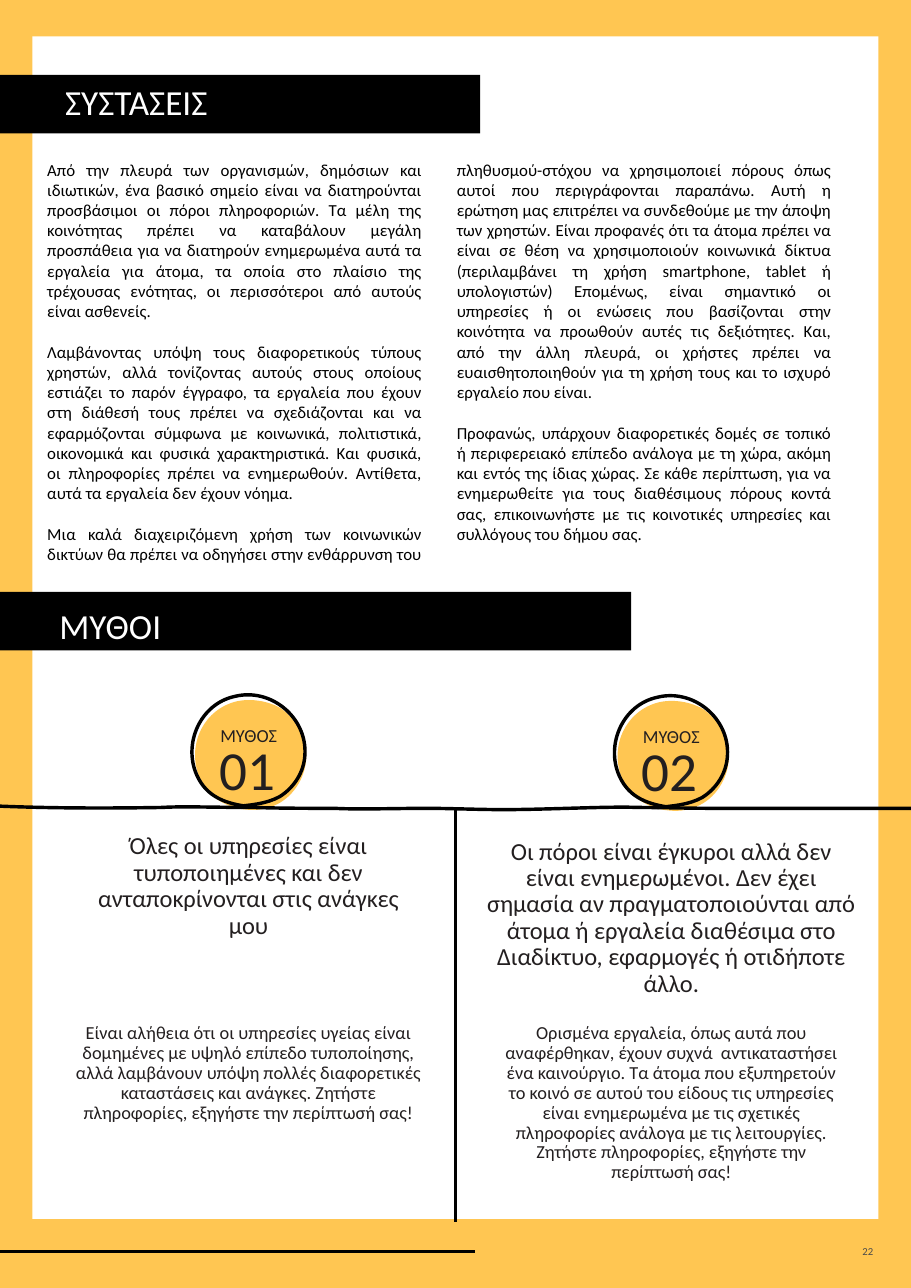
from dataclasses import dataclass

from lxml import etree
from pptx import Presentation
from pptx import util as u
from pptx.dml.color import RGBColor
from pptx.enum import shapes, text
from pptx.oxml.ns import qn


@dataclass
class Theme:
    font: str = "Calibri"
    yellow: RGBColor = RGBColor(0xFF, 0xC6, 0x52)
    white: RGBColor = RGBColor(0xFF, 0xFF, 0xFF)
    black: RGBColor = RGBColor(0, 0, 0)
    ink: RGBColor = RGBColor(0x23, 0x1F, 0x20)
    grey: RGBColor = RGBColor(0x4B, 0x4B, 0x4B)
    banner: int = 23
    body: int = 11
    claim: int = 16
    answer: int = 12
    label: int = 12
    number: int = 36
    page: int = 7
    rule: float = 1.5
    stroke: float = 2.25


theme = Theme()
ALIGN = text.PP_ALIGN
ANCHOR = text.MSO_ANCHOR


def write(box, paragraphs, size, color, align, anchor=ANCHOR.TOP, spacing=0.9, gap=0):
    frame = box.text_frame
    frame.word_wrap = True
    frame.vertical_anchor = anchor
    frame.text = "\n".join(paragraphs)
    for index, paragraph in enumerate(frame.paragraphs):
        paragraph.alignment = align
        if spacing != 1:
            paragraph.line_spacing = spacing
        if index and gap:
            paragraph.space_before = u.Pt(gap)
        for run in paragraph.runs:
            run.font.name = theme.font
            run.font.size = u.Pt(size)
            run.font.color.rgb = color


def draw_curve(parent, box, start, curves, closed=False):
    """Draw cubic curves inside a box; points are centimetres from its corner."""
    left, top, width, height = map(u.Cm, box)
    builder = parent.build_freeform(left, top)
    builder.add_line_segments([(left + width, top + height)], close=False)
    outline = builder.convert_to_shape()
    path = outline._element.spPr.find(".//" + qn("a:path"))
    for segment in list(path):
        path.remove(segment)
    for tag, points in [("a:moveTo", [start])] + [("a:cubicBezTo", curve) for curve in curves]:
        segment = etree.SubElement(path, qn(tag))
        for x, y in points:
            etree.SubElement(segment, qn("a:pt"), x=str(u.Cm(x)), y=str(u.Cm(y)))
    outline.shadow.inherit = False
    if closed:
        etree.SubElement(path, qn("a:close"))
        outline.fill.solid()
        outline.fill.fore_color.rgb = theme.yellow
        outline.line.fill.background()
    else:
        outline.fill.background()
        outline.line.color.rgb = theme.black
        outline.line.width = u.Pt(theme.stroke)


prs = Presentation()
prs.slide_width, prs.slide_height = u.Cm(21), u.Cm(29.7)
slide = prs.slides.add_slide(prs.slide_layouts[6])

# Page frame and section banners: box, colour, title, left and top margins
for box, color, title, left, top in [
    ((0, 0, 21, 29.7), theme.yellow, "", 0, 0),
    ((0.75, 0.84, 19.5, 27.27), theme.white, "", 0, 0),
    ((0, 1.73, 11.07, 1.35), theme.black, "ΣΥΣΤΑΣΕΙΣ", 1.5, 0.13),
    ((0, 13.65, 14.55, 1.35), theme.black, "ΜΥΘΟΙ", 1.37, 0.46),
]:
    panel = slide.shapes.add_shape(shapes.MSO_SHAPE.RECTANGLE, *map(u.Cm, box))
    panel.shadow.inherit = False
    panel.fill.solid()
    panel.fill.fore_color.rgb = color
    panel.line.fill.background()
    if title:
        panel.text_frame.margin_left = u.Cm(left)
        panel.text_frame.margin_top = u.Cm(top)
        write(panel, [title], theme.banner, theme.white, ALIGN.LEFT, ANCHOR.MIDDLE)

# Footer rule and divider between the two myths
for ends, width in [((0, 28.86, 10.95, 28.86), theme.rule),
                    ((10.5, 18.67, 10.5, 28.17), theme.stroke)]:
    rule = slide.shapes.add_connector(shapes.MSO_CONNECTOR.STRAIGHT, *map(u.Cm, ends))
    rule.line.color.rgb = theme.black
    rule.line.width = u.Pt(width)
    etree.SubElement(rule._element.spPr, qn("a:effectLst"))

# Recommendations in two columns
recommendations = [
    "Από την πλευρά των οργανισμών, δημόσιων και ιδιωτικών, ένα βασικό σημείο είναι να "
    "διατηρούνται προσβάσιμοι οι πόροι πληροφοριών. Τα μέλη της κοινότητας πρέπει να "
    "καταβάλουν μεγάλη προσπάθεια για να διατηρούν ενημερωμένα αυτά τα εργαλεία για άτομα, "
    "τα οποία στο πλαίσιο της τρέχουσας ενότητας, οι περισσότεροι από αυτούς είναι ασθενείς.",
    "Λαμβάνοντας υπόψη τους διαφορετικούς τύπους χρηστών, αλλά τονίζοντας αυτούς στους "
    "οποίους εστιάζει το παρόν έγγραφο, τα εργαλεία που έχουν στη διάθεσή τους πρέπει να "
    "σχεδιάζονται και να εφαρμόζονται σύμφωνα με κοινωνικά, πολιτιστικά, οικονομικά και "
    "φυσικά χαρακτηριστικά. Και φυσικά, οι πληροφορίες πρέπει να ενημερωθούν. Αντίθετα, "
    "αυτά τα εργαλεία δεν έχουν νόημα.",
    "Μια καλά διαχειριζόμενη χρήση των κοινωνικών δικτύων θα πρέπει να οδηγήσει στην "
    "ενθάρρυνση του πληθυσμού-στόχου να χρησιμοποιεί πόρους όπως αυτοί που περιγράφονται "
    "παραπάνω. Αυτή η ερώτηση μας επιτρέπει να συνδεθούμε με την άποψη των χρηστών. Είναι "
    "προφανές ότι τα άτομα πρέπει να είναι σε θέση να χρησιμοποιούν κοινωνικά δίκτυα "
    "(περιλαμβάνει τη χρήση smartphone, tablet ή υπολογιστών) Επομένως, είναι σημαντικό οι "
    "υπηρεσίες ή οι ενώσεις που βασίζονται στην κοινότητα να προωθούν αυτές τις δεξιότητες. "
    "Και, από την άλλη πλευρά, οι χρήστες πρέπει να ευαισθητοποιηθούν για τη χρήση τους και "
    "το ισχυρό εργαλείο που είναι.",
    "Προφανώς, υπάρχουν διαφορετικές δομές σε τοπικό ή περιφερειακό επίπεδο ανάλογα με τη "
    "χώρα, ακόμη και εντός της ίδιας χώρας. Σε κάθε περίπτωση, για να ενημερωθείτε για τους "
    "διαθέσιμους πόρους κοντά σας, επικοινωνήστε με τις κοινοτικές υπηρεσίες και συλλόγους "
    "του δήμου σας.",
]
advice = slide.shapes.add_textbox(u.Cm(0.84), u.Cm(3.55), u.Cm(18.58), u.Cm(9.65))
write(advice, recommendations, theme.body, theme.black, ALIGN.JUSTIFY, spacing=1, gap=13.4)
columns = advice.text_frame._txBody.bodyPr
columns.set("numCol", "2")
columns.set("spcCol", str(u.Cm(0.8)))

# Myths: number, badge corner, claim box and text, answer box and text
myths = [
    ("01", (4.44, 16.03), (1.59, 19.1, 8.28, 1.17),
     "Όλες οι υπηρεσίες είναι τυποποιημένες και δεν ανταποκρίνονται στις ανάγκες μου",
     (1.48, 23.49, 8.5, 5.03),
     "Είναι αλήθεια ότι οι υπηρεσίες υγείας είναι δομημένες με υψηλό επίπεδο τυποποίησης, "
     "αλλά λαμβάνουν υπόψη πολλές διαφορετικές καταστάσεις και ανάγκες. Ζητήστε "
     "πληροφορίες, εξηγήστε την περίπτωσή σας!"),
    ("02", (14.18, 16.05), (10.93, 19.22, 9.09, 1.17),
     "Οι πόροι είναι έγκυροι αλλά δεν είναι ενημερωμένοι. Δεν έχει σημασία αν "
     "πραγματοποιούνται από άτομα ή εργαλεία διαθέσιμα στο Διαδίκτυο, εφαρμογές ή "
     "οτιδήποτε άλλο.",
     (11.25, 23.49, 8.46, 4.19),
     "Ορισμένα εργαλεία, όπως αυτά που αναφέρθηκαν, έχουν συχνά  αντικαταστήσει ένα "
     "καινούργιο. Τα άτομα που εξυπηρετούν το κοινό σε αυτού του είδους τις υπηρεσίες "
     "είναι ενημερωμένα με τις σχετικές πληροφορίες ανάλογα με τις λειτουργίες. Ζητήστε "
     "πληροφορίες, εξηγήστε την περίπτωσή σας!"),
]
disc = [
    ((0.64, 2.44), (0.94, 2.57), (1.24, 2.59)), ((1.5, 2.62), (1.75, 2.57), (1.96, 2.46)),
    ((2.36, 2.26), (2.64, 1.78), (2.62, 1.3)), ((2.59, 0.89), (2.36, 0.48), (2.03, 0.25)),
    ((1.68, 0.05), (1.19, 0), (0.84, 0.15)), ((0.43, 0.31), (0.15, 0.69), (0.08, 1.09)),
    ((0, 1.5), (0.13, 1.96), (0.43, 2.24)),
]
ring = [
    ((1.32, 2.54), (1.7, 2.51), (2.01, 2.34)), ((2.34, 2.13), (2.57, 1.78), (2.59, 1.37)),
    ((2.64, 0.51), (1.8, -0.18), (0.97, 0.03)), ((0.18, 0.2), (-0.23, 1.12), (0.1, 1.85)),
    ((0.33, 2.36), (0.79, 2.51), (1.3, 2.57)),
]
for number, (x, y), claim_box, claim, answer_box, answer in myths:
    for box, words, size in [(answer_box, answer, theme.answer), (claim_box, claim, theme.claim)]:
        statement = slide.shapes.add_textbox(*map(u.Cm, box))
        write(statement, [words], size, theme.ink, ALIGN.CENTER)
    badge = slide.shapes.add_group_shape().shapes
    draw_curve(badge, (x, y + 0.05, 2.64, 2.62), (0.43, 2.24), disc, closed=True)
    for box, words, size in [((x - 0.06, y + 0.92, 2.64, 1.73), number, theme.number),
                             ((x, y + 0.65, 2.59, 0.61), "ΜΥΘΟΣ", theme.label)]:
        caption = badge.add_textbox(*map(u.Cm, box))
        write(caption, [words], size, theme.ink, ALIGN.CENTER, ANCHOR.MIDDLE)
    draw_curve(badge, (x, y, 2.59, 2.57), (0.97, 2.57), ring)

# Hand-drawn line under the badges
wave = [
    ((1.24, 0.05), (2.49, 0.05), (3.73, 0.03)), ((4.24, 0), (4.88, 0.03), (5.84, 0.03)),
    ((6.48, 0.05), (7.09, 0.05), (7.72, 0.05)), ((8.2, 0.08), (9.22, 0.05), (9.8, 0.05)),
    ((10.39, 0.05), (11, 0.08), (11.61, 0.08)), ((12.62, 0.08), (14.1, 0), (14.68, 0.03)),
    ((15.27, 0.03), (15.85, 0.05), (16.46, 0.05)), ((16.94, 0.05), (18.8, 0.05), (18.92, 0.05)),
    ((19.51, 0.05), (20.07, 0.05), (20.62, 0.05)), ((20.75, 0.05), (20.88, 0.05), (21, 0.05)),
]
draw_curve(slide.shapes, (0, 18.59, 21, 0.08), (0, 0), wave)

# Page number
page = slide.shapes.add_textbox(u.Cm(17.64), u.Cm(28.65), u.Cm(2.74), u.Cm(0.41))
write(page, ["22"], theme.page, theme.grey, ALIGN.RIGHT, ANCHOR.MIDDLE, spacing=1)

prs.save("out.pptx")
